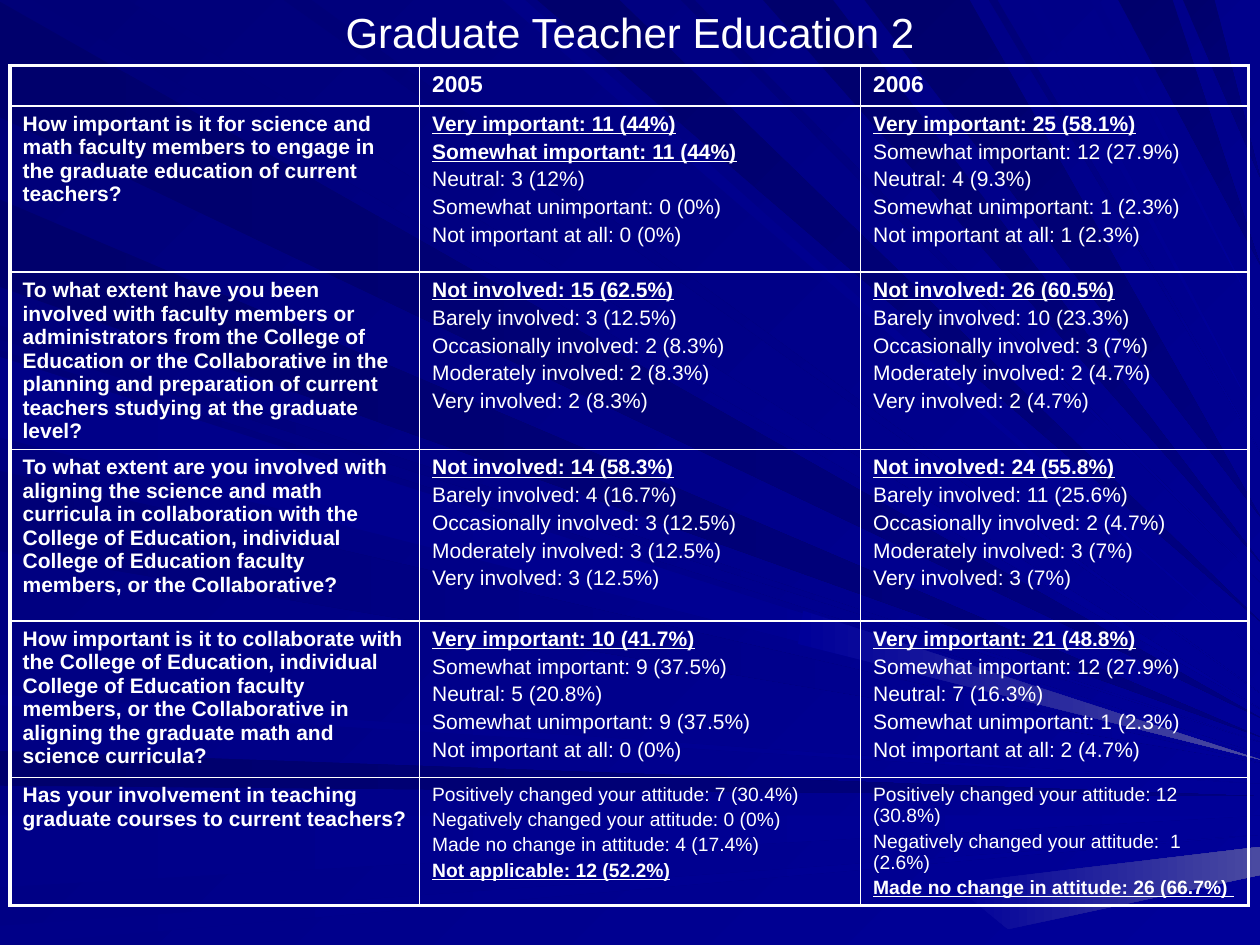
from lxml.etree import SubElement
from pptx import Presentation
from pptx.dml.color import RGBColor
from pptx.enum.text import MSO_ANCHOR, PP_ALIGN
from pptx.oxml.ns import qn
from pptx.util import Pt

WHITE = RGBColor(0xFF, 0xFF, 0xFF)
BLUE = RGBColor(0x00, 0x00, 0x99)
NAVY = RGBColor(0x00, 0x00, 0x80)
MIDNIGHT = RGBColor(0x00, 0x00, 0x78)
DARK = RGBColor(0x00, 0x00, 0x6C)
DEEP = RGBColor(0x00, 0x00, 0x77)
SOFT = RGBColor(0x00, 0x00, 0x88)
MIST = RGBColor(0x4A, 0x4A, 0xA1)

WIDTH, HEIGHT = 720, 540

# Rays run to the right edge: start of the ray, its end, height of its tip
LEFT_RAYS = [
    (DARK, NAVY, [(1, 67, 410), (429, 449, 455), (114, 164, 421)]),
    (DEEP, BLUE, [(186, 194, 424), (200, 246, 431), (269, 315, 436)]),
    (SOFT, BLUE, [(466, 507, 466), (529, 540, 477), (397, 403, 448), (204, 250, 434)]),
]
TOP_RAYS = [
    (DEEP, BLUE, [(19, 73, 405), (162, 178, 396), (389, 397, 333), (565, 570, 258)]),
    (SOFT, BLUE, [(287, 300, 374), (587, 593, 242), (623, 628, 183)]),
    (DARK, NAVY, [(307, 354, 355), (436, 476, 321), (494, 554, 295),
                  (639, 670, 151), (676, 694, 101)]),
]
GLOWS = [
    [(459, 349), (456, 368), (WIDTH, 434)],
    [(544, 505), (576, 531), (WIDTH, 500), (WIDTH, 484)],
]

IMPORTANCE = ["Very important", "Somewhat important", "Neutral",
              "Somewhat unimportant", "Not important at all"]
INVOLVEMENT = ["Not involved", "Barely involved", "Occasionally involved",
               "Moderately involved", "Very involved"]
ATTITUDE = ["Positively changed your attitude", "Negatively changed your attitude",
            "Made no change in attitude", "Not applicable"]

# Question, answer labels, answer size, then per year: values and emphasised answers
SURVEY = [
    ("How important is it for science and math faculty members to engage in the "
     "graduate education of current teachers?", IMPORTANCE, 12,
     [(["11 (44%)", "11 (44%)", "3 (12%)", "0 (0%)", "0 (0%)"], {0, 1}),
      (["25 (58.1%)", "12 (27.9%)", "4 (9.3%)", "1 (2.3%)", "1 (2.3%)"], {0})]),
    ("To what extent have you been involved with faculty members or administrators from "
     "the College of Education or the Collaborative in the planning and preparation of "
     "current teachers studying at the graduate level?", INVOLVEMENT, 12,
     [(["15 (62.5%)", "3 (12.5%)", "2 (8.3%)", "2 (8.3%)", "2 (8.3%)"], {0}),
      (["26 (60.5%)", "10 (23.3%)", "3 (7%)", "2 (4.7%)", "2 (4.7%)"], {0})]),
    ("To what extent are you involved with aligning the science and math curricula in "
     "collaboration with the College of Education, individual College of Education "
     "faculty members, or the Collaborative?", INVOLVEMENT, 12,
     [(["14 (58.3%)", "4 (16.7%)", "3 (12.5%)", "3 (12.5%)", "3 (12.5%)"], {0}),
      (["24 (55.8%)", "11 (25.6%)", "2 (4.7%)", "3 (7%)", "3 (7%)"], {0})]),
    ("How important is it to collaborate with the College of Education, individual "
     "College of Education faculty members, or the Collaborative in aligning the "
     "graduate math and science curricula?", IMPORTANCE, 12,
     [(["10 (41.7%)", "9 (37.5%)", "5 (20.8%)", "9 (37.5%)", "0 (0%)"], {0}),
      (["21 (48.8%)", "12 (27.9%)", "7 (16.3%)", "1 (2.3%)", "2 (4.7%)"], {0})]),
    ("Has your involvement in teaching graduate courses to current teachers?", ATTITUDE, 11,
     [(["7 (30.4%)", "0 (0%)", "4 (17.4%)", "12 (52.2%)"], {3}),
      (["12 (30.8%)", " 1 (2.6%)", "26 (66.7%) "], {2})]),
]


class SurveySlide:
    font, inner_line, outer_line = "Arial", 1, 2.25

    def __init__(self, slide):
        self.slide = slide

    def gradient(self, fill, start, end, angle):
        fill.gradient()
        fill.gradient_angle = -angle % 360
        for stop, color in zip(fill.gradient_stops, (start, end)):
            stop.color.rgb = color

    def ray(self, group, corners, start, end, angle):
        first, *rest = [(Pt(x), Pt(y)) for x, y in corners]
        builder = group.shapes.build_freeform(*first)
        builder.add_line_segments(rest, close=True)
        ray = builder.convert_to_shape()
        ray.shadow.inherit = False
        ray.line.fill.background()
        self.gradient(ray.fill, start, end, angle)

    def backdrop(self):
        self.gradient(self.slide.background.fill, MIDNIGHT, BLUE, 45)
        group = self.slide.shapes.add_group_shape()
        for start, end, rays in LEFT_RAYS:
            for upper, lower, tip in rays:
                self.ray(group, [(0, upper), (0, lower), (WIDTH, tip)], start, end, 0)
        for start, end, rays in TOP_RAYS:
            for left, right, tip in rays:
                self.ray(group, [(left, 0), (right, 0), (WIDTH, tip)], start, end, 45)
        for corners in GLOWS:
            self.ray(group, corners, BLUE, MIST, 0)
        self.slide.shapes._spTree.insert(2, group._element)  # behind the title

    def run(self, paragraph, text, size, bold=False, underline=False):
        text_run = paragraph.add_run()
        text_run.text = text
        font = text_run.font
        font.name, font.size, font.color.rgb = self.font, Pt(size), WHITE
        font.bold, font.underline = bold, underline

    def title(self, text, left, top, width, height, size):
        title = self.slide.shapes.title
        title.left, title.top, title.width, title.height = map(Pt, (left, top, width, height))
        title.text_frame.vertical_anchor = MSO_ANCHOR.MIDDLE
        paragraph = title.text_frame.paragraphs[0]
        paragraph.alignment = PP_ALIGN.CENTER
        self.run(paragraph, text, size)

    def table(self, left, top, widths, heights):
        table = self.slide.shapes.add_table(
            len(heights), len(widths), Pt(left), Pt(top), Pt(sum(widths)), Pt(sum(heights))).table
        table.first_row = table.horz_banding = False
        for column, width in zip(table.columns, widths):
            column.width = Pt(width)
        last_row, last_column = len(heights) - 1, len(widths) - 1
        for r, height in enumerate(heights):
            table.rows[r].height = Pt(height)
            for c in range(len(widths)):
                self.borders(table.cell(r, c), {"lnL": c == 0, "lnR": c == last_column,
                                                "lnT": r == 0, "lnB": r == last_row})
        return table

    def borders(self, cell, outer_sides):
        properties = cell._tc.get_or_add_tcPr()
        for side, is_outer in outer_sides.items():
            width = Pt(self.outer_line if is_outer else self.inner_line)
            line = SubElement(properties, qn(f"a:{side}"), w=str(width))
            SubElement(SubElement(line, qn("a:solidFill")), qn("a:srgbClr"), val=str(WHITE))
        cell.fill.background()

    def cell(self, cell, lines, size, emphasised=(), bold=False):
        for i, text in enumerate(lines):
            paragraph = cell.text_frame.paragraphs[0] if i == 0 else cell.text_frame.add_paragraph()
            if i:
                paragraph.space_before = Pt(0.2 * size)
            self.run(paragraph, text, size, bold or i in emphasised, i in emphasised)


def main():
    presentation = Presentation()
    presentation.slide_width, presentation.slide_height = Pt(WIDTH), Pt(HEIGHT)
    page = SurveySlide(presentation.slides.add_slide(presentation.slide_layouts[5]))
    page.backdrop()
    page.title("Graduate Teacher Education 2", 36, 0, 648, 36, 24)

    table = page.table(5.76, 37.5, [234, 252, 221.76], [22.8, 95, 101, 98, 89.5, 73])
    corner = table.cell(0, 0).text_frame.paragraphs[0]
    corner._p.get_or_add_endParaRPr().set("sz", "1300")  # keeps the empty cell low
    for column, year in enumerate(["2005", "2006"], 1):
        page.cell(table.cell(0, column), [year], 13, bold=True)
    for row, (question, labels, size, years) in enumerate(SURVEY, 1):
        page.cell(table.cell(row, 0), [question], 12, bold=True)
        for column, (values, emphasised) in enumerate(years, 1):
            answers = [f"{label}: {value}" for label, value in zip(labels, values)]
            page.cell(table.cell(row, column), answers, size, emphasised)
    presentation.save("out.pptx")


if __name__ == "__main__":
    main()
